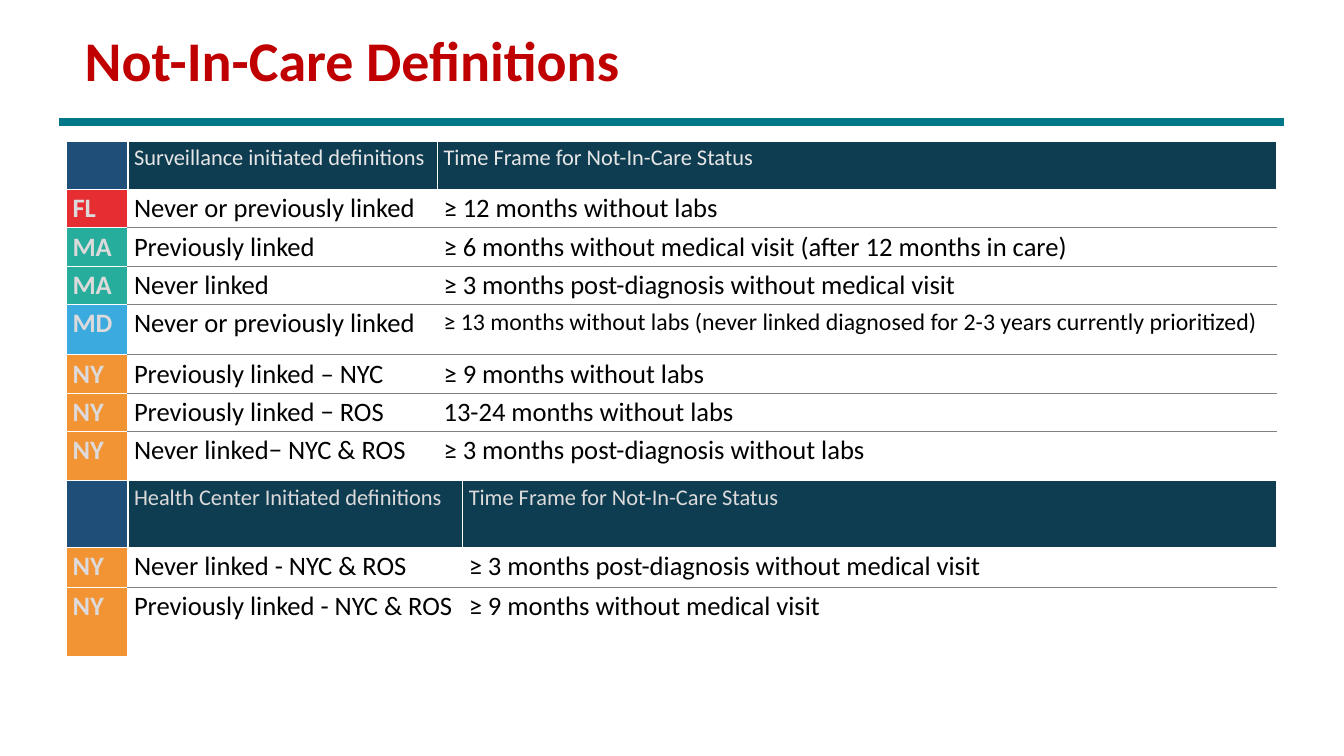
import pptx
import pptx.util
import pptx.dml.color
import pptx.enum.shapes
import pptx.enum.text
import pptx.oxml
import pptx.oxml.ns

Inches = pptx.util.Inches
Pt = pptx.util.Pt

HUES = {
    "title": "C00000", "rule": "00788A", "corner": "1F4E79", "head": "0E3D52",
    "FL": "E62D32", "MA": "26AD9C", "MD": "3BABDF", "NY": "F29334",
    "pale": "DCDADA", "light": "E7E6E6", "text": "000000",
    "white": "FFFFFF", "grey": "808080",
}
FACE = "Calibri"
TIME = "Time Frame for Not-In-Care Status"

SURVEY = [
    ("", "Surveillance initiated definitions", TIME),
    ("FL", "Never or previously linked", "≥ 12 months without labs"),
    ("MA", "Previously linked",
     "≥ 6 months without medical visit (after 12 months in care)"),
    ("MA", "Never linked", "≥ 3 months post-diagnosis without medical visit"),
    ("MD", "Never or previously linked",
     "≥ 13 months without labs (never linked diagnosed for 2-3 years currently prioritized)"),
    ("NY", "Previously linked – NYC", "≥ 9 months without labs"),
    ("NY", "Previously linked − ROS", "13-24 months without labs"),
    ("NY", "Never linked− NYC & ROS", "≥ 3 months post-diagnosis without labs"),
]
CENTER = [
    ("", "Health Center Initiated definitions", TIME),
    ("NY", "Never linked - NYC & ROS",
     "≥ 3 months post-diagnosis without medical visit"),
    ("NY", "Previously linked - NYC & ROS", "≥ 9 months without medical visit"),
]


def rgb(name):
    return pptx.dml.color.RGBColor.from_string(HUES[name])


def style(font, size, hue, bold=False):
    font.name, font.size, font.bold = FACE, Pt(size), bold
    font.color.rgb = rgb(hue)


def add_edges(cell, hues):
    """Draw the left, right, top and bottom borders; call before filling."""
    props = cell._tc.get_or_add_tcPr()
    for side, hue in zip("LRTB", hues):
        props.append(pptx.oxml.parse_xml(
            f'<a:ln{side} {pptx.oxml.ns.nsdecls("a")} w="12700"><a:solidFill>'
            f'<a:srgbClr val="{HUES[hue]}"/></a:solidFill></a:ln{side}>'))


def add_title(slide, left, top, width, height):
    title = slide.shapes.title
    title.left, title.top = Inches(left), Inches(top)
    title.width, title.height = Inches(width), Inches(height)
    frame = title.text_frame
    frame.text = "Not-In-Care Definitions"
    frame.vertical_anchor = pptx.enum.text.MSO_ANCHOR.BOTTOM
    para = frame.paragraphs[0]
    para.alignment = pptx.enum.text.PP_ALIGN.LEFT
    para.line_spacing = Pt(40)
    style(para.runs[0].font, 40, "title", True)


def add_rule(slide, left, top, width):
    rule = slide.shapes.add_connector(
        pptx.enum.shapes.MSO_CONNECTOR.STRAIGHT,
        Inches(left), Inches(top), Inches(left + width), Inches(top))
    rule.line.color.rgb = rgb("rule")
    rule.line.width = Pt(6.25)
    rule._element.spPr.append(pptx.oxml.parse_xml(
        f'<a:effectLst {pptx.oxml.ns.nsdecls("a")}/>'))


def fill_cell(cell, text, row, col, last, state, hue):
    # Grey lines part the body rows; all other borders are white
    above = "grey" if col and row > 1 else "white"
    below = "grey" if col and 0 < row < last else "white"
    add_edges(cell, ("white", "white", above, below))

    # Background: dark header, state colours in the first column
    if row and col:
        cell.fill.background()
    else:
        cell.fill.solid()
        cell.fill.fore_color.rgb = rgb(
            state if row else "head" if col else "corner")

    if not text:
        return
    cell.margin_left = cell.margin_right = Inches(0.06)
    cell.margin_top = cell.margin_bottom = Inches(0.03)
    cell.text_frame.text = text
    font = cell.text_frame.paragraphs[0].runs[0].font
    if row == 0:
        style(font, 16, hue)
    elif col == 0:
        style(font, 19, "pale", True)
    else:
        style(font, 17 if len(text) > 80 else 19, "text")


def add_grid(slide, left, top, widths, heights, rows, hue):
    grid = slide.shapes.add_table(
        len(rows), len(widths), Inches(left), Inches(top),
        Inches(sum(widths)), Inches(sum(heights))).table
    grid.first_row = grid.horz_banding = False
    for col, width in zip(grid.columns, widths):
        col.width = Inches(width)
    for row, height in zip(grid.rows, heights):
        row.height = Inches(height)
    for r, texts in enumerate(rows):
        for c, text in enumerate(texts):
            fill_cell(grid.cell(r, c), text, r, c, len(rows) - 1, texts[0], hue)


def main():
    deck = pptx.Presentation()
    deck.slide_width, deck.slide_height = Inches(13.33), Inches(7.5)
    slide = deck.slides.add_slide(deck.slide_layouts[5])
    add_title(slide, 0.74, 0.26, 12, 0.71)
    add_rule(slide, 0.59, 1.21, 12.15)
    add_grid(slide, 0.66, 1.4, (0.61, 3.07, 8.32),
             (0.48, 0.37, 0.37, 0.37, 0.5, 0.37, 0.37, 0.68), SURVEY, "light")
    add_grid(slide, 0.66, 4.77, (0.61, 3.32, 8.07),
             (0.66, 0.4, 0.68), CENTER, "pale")
    deck.save("out.pptx")


if __name__ == "__main__":
    main()
